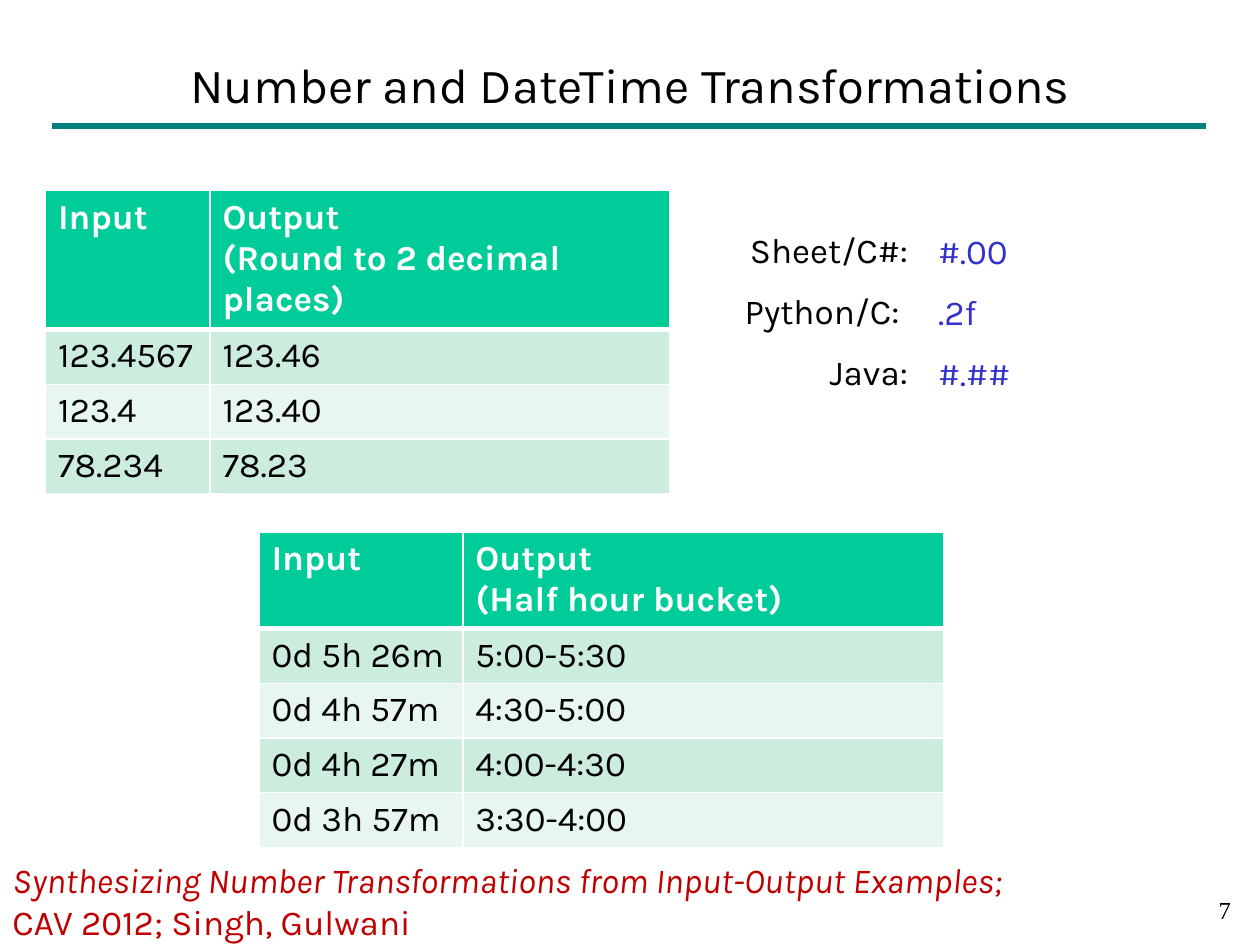
import pptx
import pptx.dml.color
import pptx.enum.shapes
import pptx.enum.text
import pptx.oxml.ns
import pptx.util
from lxml import etree

Pt = pptx.util.Pt
RGBColor = pptx.dml.color.RGBColor
ALIGN = pptx.enum.text.PP_ALIGN
ANCHOR = pptx.enum.text.MSO_ANCHOR
qn = pptx.oxml.ns.qn

BLACK = RGBColor(0x00, 0x00, 0x00)
WHITE = RGBColor(0xFF, 0xFF, 0xFF)
TEAL = RGBColor(0x00, 0x80, 0x80)
GREEN = RGBColor(0x00, 0xCC, 0x99)
BANDS = (RGBColor(0xCC, 0xEC, 0xDE), RGBColor(0xE7, 0xF6, 0xEF))
BLUE = RGBColor(0x33, 0x33, 0xCC)
RED = RGBColor(0xC0, 0x00, 0x00)
FONT = "Karla"

ROUNDING = [
    ("Input", "Output\n(Round to 2 decimal places)"),
    ("123.4567", "123.46"),
    ("123.4", "123.40"),
    ("78.234", "78.23"),
]
BUCKETS = [
    ("Input", "Output\n(Half hour bucket)"),
    ("0d 5h 26m", "5:00-5:30"),
    ("0d 4h 57m", "4:30-5:00"),
    ("0d 4h 27m", "4:00-4:30"),
    ("0d 3h 57m", "3:30-4:00"),
]


def write(tf, text, color, size=20, name=FONT, align=ALIGN.LEFT, before=0, bold=False):
    """Fill a text frame with one styled paragraph per line and return them."""
    tf.text = text
    for p in tf.paragraphs:
        p.alignment = align
        p.space_before = Pt(before)
        p.font.size = Pt(size)
        p.font.name = name
        p.font.bold = bold
        p.font.color.rgb = color
    return tf.paragraphs


def add_text(s, box, text, color, anchor=ANCHOR.TOP, **style):
    """Add a wrapping text box and return its paragraphs."""
    tf = s.shapes.add_textbox(*map(Pt, box)).text_frame
    tf.word_wrap = True
    tf.vertical_anchor = anchor
    return write(tf, text, color, **style)


def set_borders(cell, top, bottom):
    """Draw white borders around a cell, with the given widths above and below."""
    tcPr = cell._tc.get_or_add_tcPr()
    for side, width in (("L", 1), ("R", 1), ("T", top), ("B", bottom)):
        ln = etree.SubElement(tcPr, qn(f"a:ln{side}"), w=str(Pt(width)))
        fill = etree.SubElement(ln, qn("a:solidFill"))
        etree.SubElement(fill, qn("a:srgbClr"), val=str(WHITE))


def add_examples(s, box, rows, first_width, header_height):
    """Add a banded two-column table of inputs and outputs."""
    left, top, width, height = box
    table = s.shapes.add_table(len(rows), 2, *map(Pt, box)).table
    table.columns[0].width = Pt(first_width)
    table.columns[1].width = Pt(width - first_width)
    row_height = (height - header_height) / (len(rows) - 1)
    for i, row in enumerate(rows):
        header = i == 0
        table.rows[i].height = Pt(header_height if header else row_height)
        for j, text in enumerate(row):
            cell = table.cell(i, j)
            set_borders(cell, 3 if i == 1 else 1, 3 if header else 1)
            cell.fill.solid()
            cell.fill.fore_color.rgb = GREEN if header else BANDS[(i - 1) % 2]
            write(cell.text_frame, text, WHITE if header else BLACK, bold=header)


def add_heading(s, box):
    """Add the title with the teal rule along the bottom of its box."""
    left, top, width, height = box
    add_text(s, box, "Number and DateTime Transformations", BLACK,
             anchor=ANCHOR.MIDDLE, size=28, align=ALIGN.CENTER)
    bottom = top + height
    rule = s.shapes.add_connector(
        pptx.enum.shapes.MSO_CONNECTOR.STRAIGHT,
        Pt(left - 24), Pt(bottom), Pt(left + width + 23), Pt(bottom))
    rule.line.color.rgb = TEAL
    rule.line.width = Pt(4)
    etree.SubElement(rule._element.spPr, qn("a:effectLst"))


def add_formats(s, box):
    """Add the languages and, beside them, their format strings."""
    left, top, width, height = box
    label_width = 114
    add_text(s, (left, top, label_width, height), "Sheet/C#:\nPython/C: \nJava:",
             BLACK, align=ALIGN.RIGHT, before=11)
    add_text(s, (left + label_width + 3, top + 0.5, width - label_width - 3, height),
             "#.00\n.2f\n#.##", BLUE, before=11)


def add_footer(s, box):
    """Add the citation and the slide number."""
    left, top, width, height = box
    citation = add_text(
        s, box,
        "Synthesizing Number Transformations from Input-Output Examples;\n"
        "CAV 2012; Singh, Gulwani", RED)
    citation[0].font.italic = True
    add_text(s, (left + width - 150, top + 21, 150, 30), "7", BLACK,
             size=14, name="Times New Roman", align=ALIGN.RIGHT)


def main():
    """Build and save the slide."""
    prs = pptx.Presentation()
    prs.slide_width, prs.slide_height = Pt(720), Pt(540)
    s = prs.slides.add_slide(prs.slide_layouts[6])
    add_heading(s, (54, 24, 612, 48))
    add_examples(s, (26, 109, 356.5, 172.5), ROUNDING, 94, 78.5)
    add_formats(s, (412, 127, 200, 104))
    add_examples(s, (148, 304, 391.5, 175.6), BUCKETS, 116.5, 53.2)
    add_footer(s, (0, 487, 710.5, 55))
    prs.save("out.pptx")


if __name__ == "__main__":
    main()
